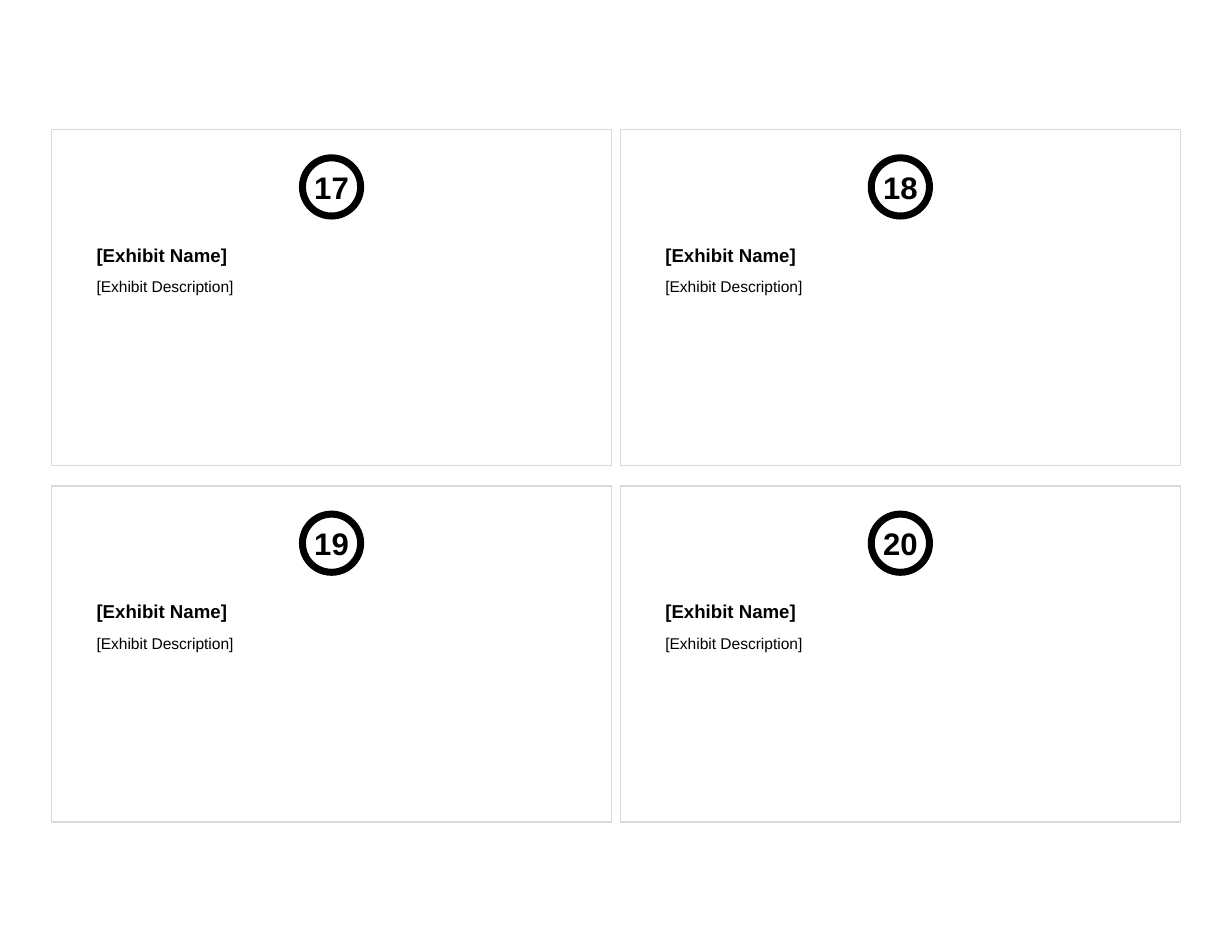
import dataclasses
import itertools

import pptx
import pptx.dml.color
import pptx.enum.shapes
import pptx.enum.text
import pptx.util

Cm = pptx.util.Cm
Pt = pptx.util.Pt
RGB = pptx.dml.color.RGBColor
SHAPES = pptx.enum.shapes.MSO_SHAPE
ALIGN = pptx.enum.text.PP_ALIGN
ANCHOR = pptx.enum.text.MSO_ANCHOR
FIT = pptx.enum.text.MSO_AUTO_SIZE


@dataclasses.dataclass(frozen=True)
class Theme:
    """Colours, font and type sizes of the exhibit cards."""
    ink: RGB = RGB(0x00, 0x00, 0x00)
    paper: RGB = RGB(0xFF, 0xFF, 0xFF)
    border: RGB = RGB(0xD9, 0xD9, 0xD9)
    font: str = "Arial"
    number_size: int = Pt(20)
    name_size: int = Pt(12)
    description_size: int = Pt(10)
    border_width: int = Pt(1)
    ring_width: int = Pt(4.5)


THEME = Theme()
FIRST_NUMBER = 17
COLUMNS, ROWS = 2, 2
GRID_LEFT, GRID_TOP = Cm(1.17), Cm(2.94)
CARD_WIDTH, CARD_HEIGHT = Cm(12.7), Cm(7.62)
COLUMN_GAP, ROW_GAP = Cm(0.2), Cm(0.46)
BADGE_SIZE, BADGE_DROP = Cm(1.32), Cm(0.64)
NUMBER_HEIGHT = Cm(1.12)

CARD_FRAME = {"margin_left": Cm(1.02), "margin_top": Cm(2.54),
              "margin_right": Cm(0.89), "margin_bottom": Cm(0.13),
              "vertical_anchor": ANCHOR.TOP, "word_wrap": True}
NUMBER_FRAME = {"margin_left": 0, "margin_top": Cm(0.13),
                "margin_right": 0, "margin_bottom": Cm(0.13),
                "word_wrap": True, "auto_size": FIT.SHAPE_TO_FIT_TEXT}
CARD_PARAGRAPH = {"alignment": ALIGN.LEFT, "line_spacing": 1.1, "space_after": Pt(6)}
NUMBER_PARAGRAPH = {"alignment": ALIGN.CENTER}


def apply(target, values):
    """Set each attribute in values on target."""
    for attribute, value in values.items():
        setattr(target, attribute, value)


def write(paragraph, wording, layout, size, bold):
    """Put formatted wording into a paragraph."""
    apply(paragraph, layout)
    run = paragraph.add_run()
    run.text = wording
    apply(run.font, {"name": THEME.font, "size": size, "bold": bold})
    run.font.color.rgb = THEME.ink


def add_outlined(slide, kind, box, colour, width):
    """Add a paper-filled shape with a coloured outline."""
    outlined = slide.shapes.add_shape(kind, *box)
    outlined.shadow.inherit = False
    outlined.fill.solid()
    outlined.fill.fore_color.rgb = THEME.paper
    outlined.line.color.rgb = colour
    outlined.line.width = width
    return outlined


def add_badge(slide, left, top, size, number):
    """Place a ringed exhibit number in a square box."""
    add_outlined(slide, SHAPES.OVAL, (left, top, size, size), THEME.ink, THEME.ring_width)
    number_top = top + (size - NUMBER_HEIGHT) // 2
    frame = slide.shapes.add_textbox(left, number_top, size, NUMBER_HEIGHT).text_frame
    apply(frame, NUMBER_FRAME)
    write(frame.paragraphs[0], str(number), NUMBER_PARAGRAPH, THEME.number_size, True)


def add_card(slide, left, top, width, height, number):
    """Place one exhibit card with its badge, name and description."""
    card = add_outlined(slide, SHAPES.RECTANGLE, (left, top, width, height),
                        THEME.border, THEME.border_width)
    frame = card.text_frame
    apply(frame, CARD_FRAME)
    write(frame.paragraphs[0], "[Exhibit Name]", CARD_PARAGRAPH, THEME.name_size, True)
    write(frame.add_paragraph(), "[Exhibit Description]", CARD_PARAGRAPH,
          THEME.description_size, False)
    add_badge(slide, left + (width - BADGE_SIZE) // 2, top + BADGE_DROP, BADGE_SIZE, number)


def add_cards_slide(deck):
    """Lay the numbered exhibit cards out in a grid on a new slide."""
    slide = deck.slides.add_slide(deck.slide_layouts.get_by_name("Blank"))
    cells = itertools.product(range(ROWS), range(COLUMNS))
    for number, (row, column) in enumerate(cells, FIRST_NUMBER):
        add_card(slide, GRID_LEFT + column * (CARD_WIDTH + COLUMN_GAP),
                 GRID_TOP + row * (CARD_HEIGHT + ROW_GAP),
                 CARD_WIDTH, CARD_HEIGHT, number)


def main():
    """Build and save the exhibit cards."""
    deck = pptx.Presentation()
    apply(deck, {"slide_width": Cm(27.94), "slide_height": Cm(21.59)})
    add_cards_slide(deck)
    deck.save("out.pptx")


if __name__ == "__main__":
    main()
